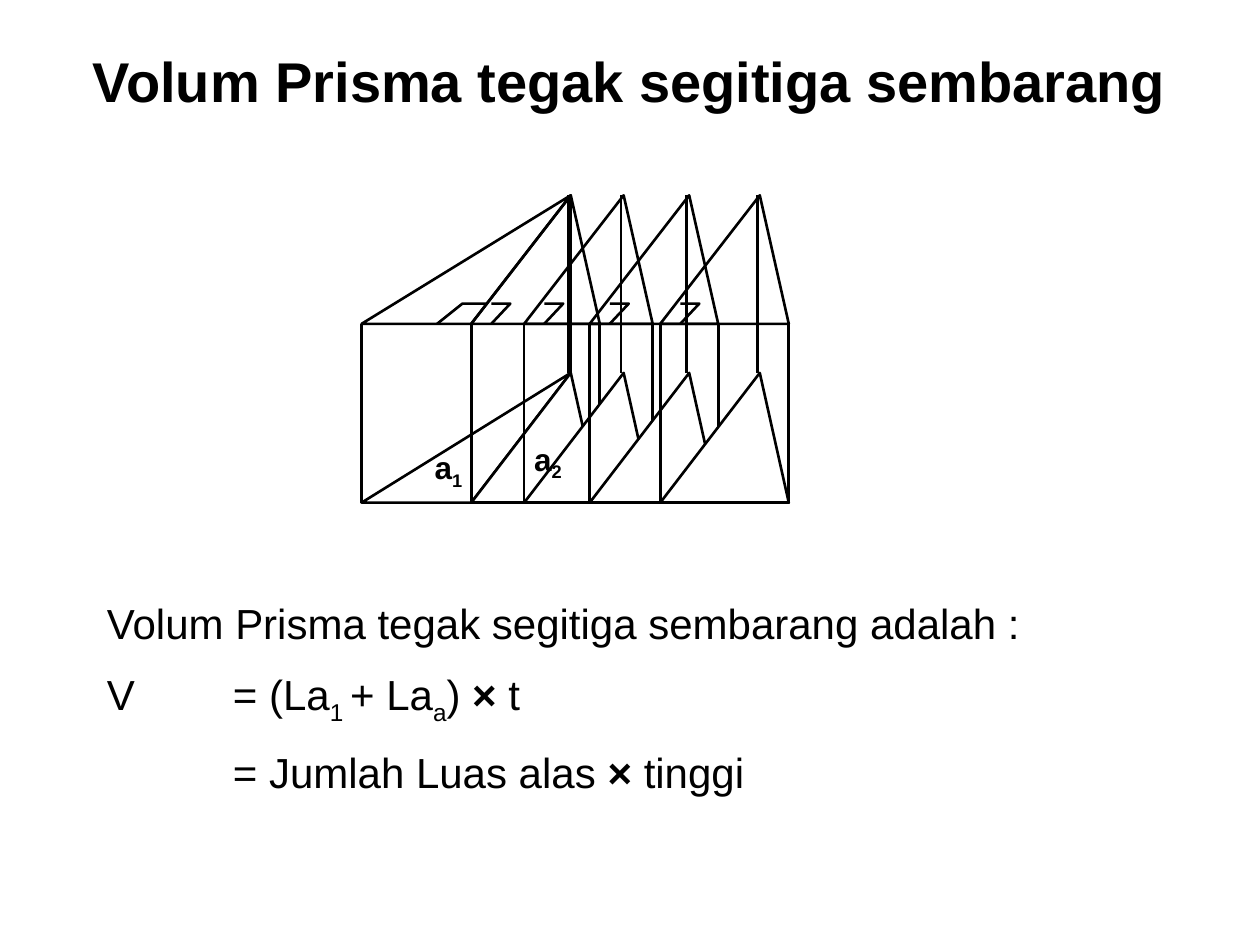
"""Build a slide on the volume of a right prism with any triangle as base."""
from lxml import etree
from pptx import Presentation
from pptx.dml.color import RGBColor
from pptx.enum.shapes import MSO_CONNECTOR
from pptx.enum.text import MSO_ANCHOR, MSO_AUTO_SIZE, PP_ALIGN
from pptx.oxml.ns import qn
from pptx.util import Pt

STRAIGHT = MSO_CONNECTOR.STRAIGHT
TOP, MIDDLE = MSO_ANCHOR.TOP, MSO_ANCHOR.MIDDLE
NO_FIT = MSO_AUTO_SIZE.NONE
LEFT, CENTER = PP_ALIGN.LEFT, PP_ALIGN.CENTER

PX = 9144
WIDE, HIGH = 1000, 750
TAB = 100
COLORS = {"ink": "000000", "face": "FFFFFF"}
ROOF, LID, PEAK, FLOOR, MARK = 155, 257, 296, 399, 241
SLICES = (374, 416, 468, 524)

TITLE = {"size": Pt(32), "bold": True}
LABEL = {"size": Pt(18), "bold": True}
BODY = {"size": Pt(24), "bold": False}

LINES = (
    (("Volum Prisma tegak segitiga sembarang adalah :", ""),),
    (("V\t= (La", ""), ("1 ", "sub"), ("+ La", ""), ("a", "sub"),
     (") ", ""), ("×", "bold"), (" t", "")),
    (("\t= Jumlah Luas alas ", ""), ("×", "bold"), (" tinggi", "")),
)


def color(name):
    """Return the named colour."""
    return RGBColor.from_string(COLORS[name])


def apply(item, values):
    """Set each attribute of item from a dict."""
    for name, value in values.items():
        setattr(item, name, value)


def pen(shape):
    """Give a shape the line of the drawing."""
    shape.line.color.rgb = color("ink")
    shape.line.width = Pt(1.5)


def edge(group, start, end):
    """Add a straight edge between two points."""
    ends = [value * PX for value in start + end]
    line = group.shapes.add_connector(STRAIGHT, *ends)
    pen(line)
    etree.SubElement(line._element.spPr, qn("a:effectLst"))


def outline(group, points, close=False, fill=None):
    """Add a path through the points, closed and filled if asked."""
    path = group.shapes.build_freeform(*points[0], scale=PX)
    path.add_line_segments(points[1:], close=close)
    shape = path.convert_to_shape()
    shape.shadow.inherit = False
    if fill:
        shape.fill.solid()
        shape.fill.fore_color.rgb = color(fill)
    else:
        shape.fill.background()
    pen(shape)


def prism(slide, left, right, peak, edges, mark):
    """Add a prism as a group: base, lid, straight edges and angle mark."""
    group = slide.shapes.add_group_shape()
    for low, high, fill in ((FLOOR, PEAK, "face"), (LID, ROOF, None)):
        outline(group, [(left, low), (right, low), (peak, high)], True, fill)
    for start, end in edges:
        edge(group, start, end)
    outline(group, mark)


def cut(slide, left):
    """Add one of the equal prisms, from its left corner."""
    right, peak = left + 102, left + 79
    edges = (((left, LID), (left, FLOOR)), ((right, LID), (right, FLOOR)),
             ((peak - 2, ROOF), (peak - 2, PEAK)),
             ((left, FLOOR), (right, FLOOR)))
    mark = [(left + 16, MARK), (left + 31, MARK), (left + 16, LID)]
    prism(slide, left, right, peak, edges, mark)


def stop(para):
    """Set the tab stop of a paragraph."""
    tabs = etree.SubElement(para._element.get_or_add_pPr(), qn("a:tabLst"))
    etree.SubElement(tabs, qn("a:tab"), pos=str(TAB * PX), algn="l")


def write(frame, lines, style, align=LEFT, anchor=TOP):
    """Fill a text frame with lines of (text, kind) runs."""
    apply(frame, {"word_wrap": True, "auto_size": NO_FIT,
                  "vertical_anchor": anchor})
    for index, runs in enumerate(lines):
        para = frame.add_paragraph() if index else frame.paragraphs[0]
        apply(para, {"alignment": align, "space_before": Pt(12 if index else 0)})
        if "\t" in runs[0][0]:
            stop(para)
        for text, kind in runs:
            run = para.add_run()
            run.text = text
            apply(run.font, {"name": "Arial", **style})
            run.font.color.rgb = color("ink")
            if kind == "bold":
                run.font.bold = True
            elif kind == "sub":
                run.font._element.set("baseline", "-25000")


def place(shape, *box):
    """Move a shape to left, top, width and height in px."""
    names = ("left", "top", "width", "height")
    apply(shape, {name: value * PX for name, value in zip(names, box)})


def note(slide, box, lines, style):
    """Add a text box."""
    shape = slide.shapes.add_textbox(*(value * PX for value in box))
    write(shape.text_frame, lines, style)


def main():
    """Build and save the slide."""
    deck = Presentation()
    apply(deck, {"slide_width": WIDE * PX, "slide_height": HIGH * PX})
    slide = deck.slides.add_slide(deck.slide_layouts[5])
    title = slide.shapes.title
    place(title, 50, 30, 900, 67)
    head = ((("Volum Prisma tegak segitiga sembarang", ""),),)
    write(title.text_frame, head, TITLE, CENTER, MIDDLE)

    edges = (((287, LID), (287, FLOOR)), ((453, ROOF), (453, PEAK)))
    mark = [(347, LID), (367, MARK), (386, MARK)]
    prism(slide, 287, 374, 453, edges, mark)
    for left in SLICES:
        cut(slide, left)

    for x, y, index in ((335, 351, "1"), (414, 344, "2")):
        note(slide, (x, y, 55, 40), ((("a", ""), (index, "sub")),), LABEL)
    note(slide, (75, 469, 835, 170), LINES, BODY)
    deck.save("out.pptx")


if __name__ == "__main__":
    main()
